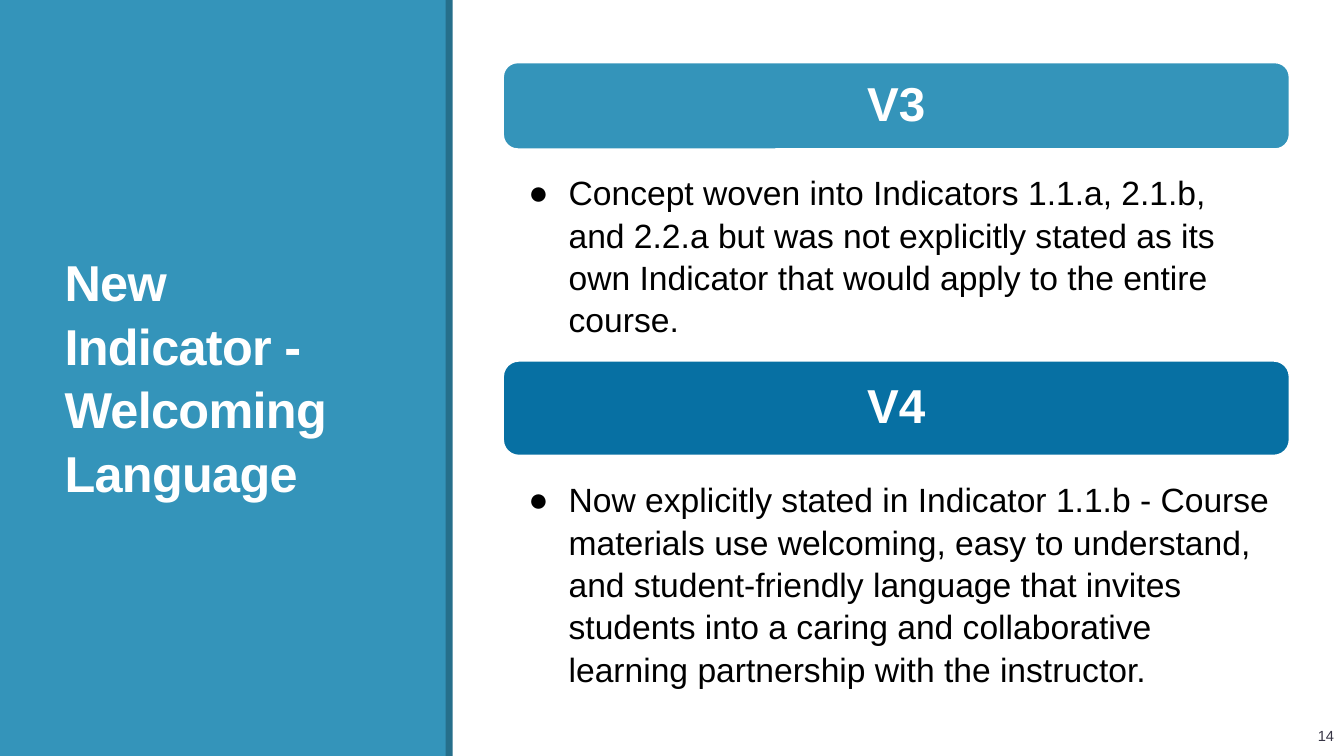
from dataclasses import dataclass

import pptx
import pptx.dml.color
import pptx.enum.shapes
import pptx.enum.text
import pptx.oxml.ns
import pptx.util
from lxml import etree

Inches = pptx.util.Inches
Pt = pptx.util.Pt
Anchor = pptx.enum.text.MSO_ANCHOR
Align = pptx.enum.text.PP_ALIGN
Shape = pptx.enum.shapes.MSO_SHAPE

COLOURS = {
    "panel": "3494BA",
    "edge": "266F8B",
    "deep": "0770A3",
    "white": "FFFFFF",
    "black": "000000",
    "number": "373545",
}
FONT = "Arial"
COLUMN_LEFT, COLUMN_WIDTH = 4.99, 7.8


@dataclass
class Section:
    heading: str
    colour: str
    top: float
    heading_height: float
    body_height: float
    body: str


SECTIONS = [
    Section("V3", "panel", 0.62, 0.86, 2.1,
            "Concept woven into Indicators 1.1.a, 2.1.b, and 2.2.a but was not "
            "explicitly stated as its own Indicator that would apply to the entire course."),
    Section("V4", "deep", 3.58, 0.94, 2.53,
            "Now explicitly stated in Indicator 1.1.b - Course materials use welcoming, "
            "easy to understand, and student-friendly language that invites students into "
            "a caring and collaborative learning partnership with the instructor."),
]


def colour(name: str) -> pptx.dml.color.RGBColor:
    return pptx.dml.color.RGBColor.from_string(COLOURS[name])


def add_block(page, kind, left: float, top: float, width: float, height: float, fill: str):
    block = page.shapes.add_shape(kind, Inches(left), Inches(top), Inches(width), Inches(height))
    block.shadow.inherit = False
    block.fill.solid()
    block.fill.fore_color.rgb = colour(fill)
    block.line.fill.background()
    return block


def set_frame(box, side: float, top: float, right: float) -> None:
    frame = box.text_frame
    frame.word_wrap = True
    frame.auto_size = pptx.enum.text.MSO_AUTO_SIZE.NONE
    frame.vertical_anchor = Anchor.MIDDLE
    frame.margin_left, frame.margin_right = Inches(side), Inches(right)
    frame.margin_top = frame.margin_bottom = Inches(top)


def add_span(box, text: str, size: float, fill: str, align, spacing: float, bold: bool = False):
    para = box.text_frame.paragraphs[0]
    para.alignment = align
    para.line_spacing = spacing
    span = para.add_run()
    span.text = text
    span.font.name = FONT
    span.font.size = Pt(size)
    span.font.bold = bold
    span.font.color.rgb = colour(fill)
    return span


def add_bullet(para) -> None:
    properties = para._p.get_or_add_pPr()
    properties.set("marL", str(Inches(0.4)))
    properties.set("indent", str(Inches(-0.4)))
    etree.SubElement(properties, pptx.oxml.ns.qn("a:buFont"), typeface=FONT)
    etree.SubElement(properties, pptx.oxml.ns.qn("a:buChar"), char="●")


def add_title(page) -> None:
    title = page.shapes.title
    title.left, title.top = Inches(0.54), Inches(0.57)
    title.width, title.height = Inches(3.37), Inches(6.31)
    set_frame(title, 0.1, 0.05, 0.1)
    span = add_span(title, "New Indicator - Welcoming Language", 36, "white",
                    Align.LEFT, 1.05, True)
    span.font._element.set("spc", "-50")
    title.element.getparent().append(title.element)


def add_section(page, section: Section) -> None:
    heading = add_block(page, Shape.ROUNDED_RECTANGLE, COLUMN_LEFT, section.top,
                        COLUMN_WIDTH, section.heading_height, section.colour)
    heading.line.color.rgb = colour("white")
    heading.line.width = Pt(1.25)
    set_frame(heading, 0.14, 0.14, 0.14)
    add_span(heading, section.heading, 34, "white", Align.CENTER, 0.9, True)

    body = page.shapes.add_textbox(
        Inches(COLUMN_LEFT), Inches(section.top + section.heading_height),
        Inches(COLUMN_WIDTH), Inches(section.body_height))
    set_frame(body, 0.25, 0.03, 0.19)
    para = body.text_frame.paragraphs[0]
    add_bullet(para)
    para.space_after = Pt(12)
    add_span(body, section.body, 24, "black", Align.LEFT, 1.05)


def add_number(page) -> None:
    box = page.shapes.add_textbox(Inches(12.14), Inches(7.1), Inches(1.19), Inches(0.4))
    set_frame(box, 0.1, 0.05, 0.1)
    add_span(box, "14", 10.5, "number", Align.RIGHT, 1.0)


def main() -> None:
    deck = pptx.Presentation()
    deck.slide_width, deck.slide_height = Inches(13.33), Inches(7.5)
    page = deck.slides.add_slide(deck.slide_layouts[5])
    add_block(page, Shape.RECTANGLE, 0, 0, 4.43, 7.5, "panel")
    add_title(page)
    add_block(page, Shape.RECTANGLE, 4.42, 0, 0.07, 7.5, "edge")
    add_number(page)
    for section in SECTIONS:
        add_section(page, section)
    deck.save("out.pptx")


if __name__ == "__main__":
    main()
